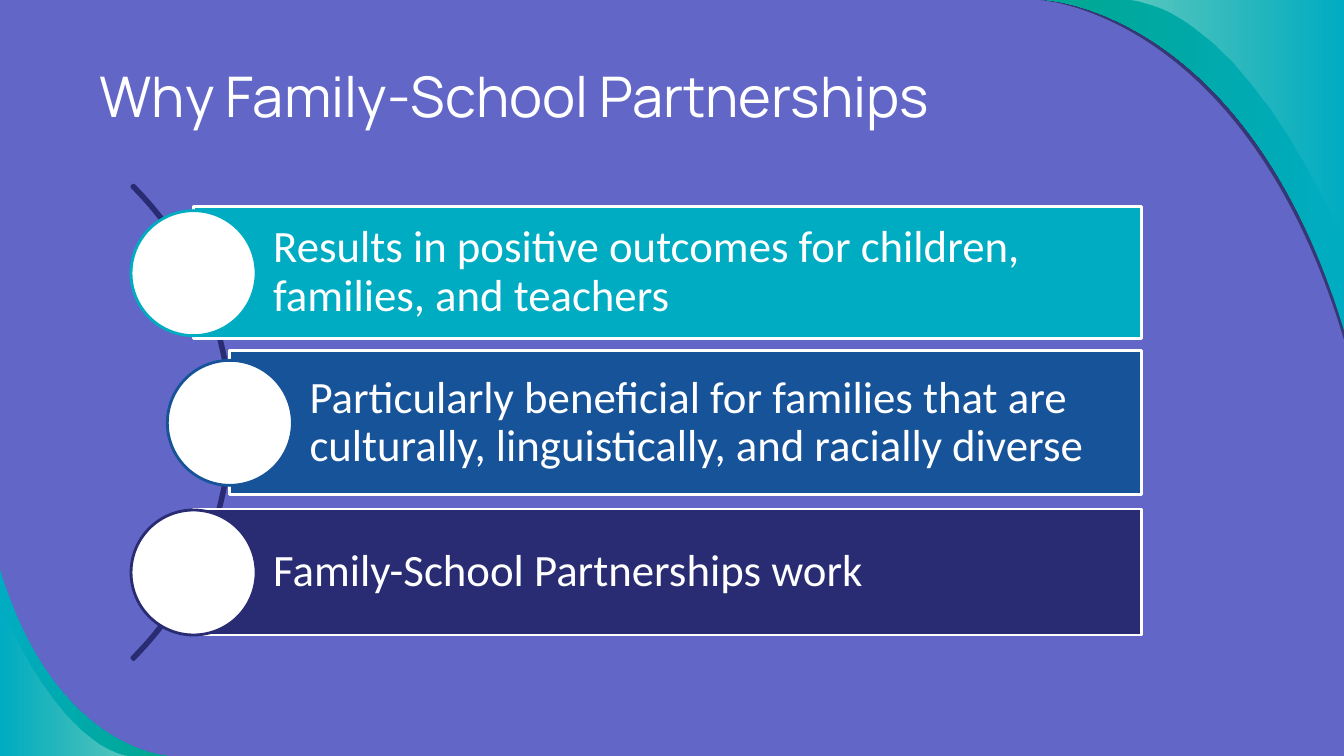
from typing import NamedTuple

from lxml.etree import Element, SubElement
from pptx import Presentation
from pptx.dml.color import RGBColor
from pptx.enum.shapes import MSO_SHAPE
from pptx.enum.text import MSO_ANCHOR, PP_ALIGN
from pptx.oxml.ns import qn
from pptx.util import Inches, Pt

WHITE = RGBColor(0xFF, 0xFF, 0xFF)
PURPLE = RGBColor(0x62, 0x67, 0xC7)
CYAN = RGBColor(0x00, 0xAC, 0xC2)
GREEN = RGBColor(0x00, 0xA7, 0x91)
BLUE = RGBColor(0x17, 0x53, 0x98)
NAVY = RGBColor(0x29, 0x2C, 0x73)
SHADE = RGBColor(0x12, 0x10, 0x2F)

WIDTH, HEIGHT = 13.33, 7.5
BAR_RIGHT = 11.32
CIRCLE = 1.24
CIRCLE_TOP, CIRCLE_STEP = 2.09, 1.485

Point = tuple[float, float]


class Stop(NamedTuple):
    color: RGBColor
    alpha: int = 100


class Swoosh(NamedTuple):
    """A slide corner cut off by one Bezier curve."""
    curve: tuple[Point, Point, Point, Point]
    corner: Point
    stops: tuple[Stop, ...]
    angle: int = 0


class Reason(NamedTuple):
    text: str
    color: RGBColor
    left: float
    top: float
    height: float


TEAL = (Stop(CYAN), Stop(GREEN))
GLOW = (Stop(WHITE, 0), Stop(WHITE, 36))
TOP_RIGHT, BOTTOM_LEFT = (WIDTH, 0), (0, HEIGHT)

SWOOSHES = [
    Swoosh(((WIDTH, 3.37), (12.35, 0.11), (10.31, 0), (10.31, 0)), TOP_RIGHT, (Stop(SHADE, 54),)),
    Swoosh(((10.38, 0), (10.38, 0), (12.38, 0.11), (WIDTH, 3.28)), TOP_RIGHT, TEAL, 180),
    Swoosh(((WIDTH, 2.44), (WIDTH, 2.44), (12.42, 0.15), (11.18, 0)), TOP_RIGHT, GLOW, 180),
    Swoosh(((1.66, HEIGHT), (1.66, HEIGHT), (0.54, 7.44), (0, 5.65)), BOTTOM_LEFT, TEAL),
    Swoosh(((0, 6.01), (0, 6.01), (0.56, 7.41), (1.32, HEIGHT)), BOTTOM_LEFT, GLOW),
]

REASONS = [
    Reason("Results in positive outcomes for children, families, and teachers",
           CYAN, 1.92, 2.05, 1.31),
    Reason("Particularly beneficial for families that are culturally, "
           "linguistically, and racially diverse", BLUE, 2.28, 3.48, 1.43),
    Reason("Family-School Partnerships work", NAVY, 1.92, 5.05, 1.25),
]


def curve_first_segments(s) -> None:
    """Turn the first three line segments of a freeform into one Bezier curve."""
    lines = list(s.element.iter(qn("a:lnTo")))[:3]
    curve = Element(qn("a:cubicBezTo"))
    lines[0].addprevious(curve)
    for line in lines:
        curve.append(line[0])
        line.getparent().remove(line)


def add_swoosh(shapes, swoosh: Swoosh) -> None:
    start, *others = [(Inches(x), Inches(y)) for x, y in (*swoosh.curve, swoosh.corner)]
    builder = shapes.build_freeform(*start)
    builder.add_line_segments(others)
    s = builder.convert_to_shape()
    curve_first_segments(s)
    s.shadow.inherit = False
    s.line.fill.background()
    if len(swoosh.stops) == 1:
        s.fill.solid()
        s.fill.fore_color.rgb = swoosh.stops[0].color
    else:
        s.fill.gradient()
        s.fill.gradient_angle = swoosh.angle
        for gradient_stop, stop in zip(s.fill.gradient_stops, swoosh.stops):
            gradient_stop.color.rgb = stop.color
    colors = list(s.element.spPr.iter(qn("a:srgbClr")))
    for color, stop in zip(colors, swoosh.stops):
        if stop.alpha < 100:
            SubElement(color, qn("a:alpha"), val=str(stop.alpha * 1000))


def add_shape(shapes, kind: MSO_SHAPE, left: float, top: float, width: float, height: float,
              *, fill: RGBColor | None, line: RGBColor):
    s = shapes.add_shape(kind, Inches(left), Inches(top), Inches(width), Inches(height))
    s.shadow.inherit = False
    if fill is None:
        s.fill.background()
    else:
        s.fill.solid()
        s.fill.fore_color.rgb = fill
    s.line.color.rgb = line
    s.line.width = Pt(2)
    return s


def write(s, text: str, *, font: str, size: int, left_inset: float = 0.1, inset: float = 0.1,
          anchor: MSO_ANCHOR = MSO_ANCHOR.TOP, spacing: float = 1.0) -> None:
    tf = s.text_frame
    tf.word_wrap = True
    tf.vertical_anchor = anchor
    tf.margin_left = Inches(left_inset)
    tf.margin_right = tf.margin_top = tf.margin_bottom = Inches(inset)
    p = tf.paragraphs[0]
    p.alignment = PP_ALIGN.LEFT
    p.line_spacing = spacing
    r = p.add_run()
    r.text = text
    r.font.name = font
    r.font.size = Pt(size)
    r.font.color.rgb = WHITE


def add_reason(shapes, reason: Reason, circle_top: float) -> None:
    bar = add_shape(shapes, MSO_SHAPE.RECTANGLE, reason.left, reason.top,
                    BAR_RIGHT - reason.left, reason.height, fill=reason.color, line=WHITE)
    write(bar, reason.text, font="Calibri", size=32, left_inset=0.79, inset=0.09,
          anchor=MSO_ANCHOR.MIDDLE, spacing=0.9)
    add_shape(shapes, MSO_SHAPE.OVAL, reason.left - CIRCLE / 2, circle_top,
              CIRCLE, CIRCLE, fill=WHITE, line=reason.color)


def main() -> None:
    prs = Presentation()
    prs.slide_width, prs.slide_height = Inches(WIDTH), Inches(HEIGHT)
    slide = prs.slides.add_slide(prs.slide_layouts[6])
    slide.background.fill.solid()
    slide.background.fill.fore_color.rgb = PURPLE
    shapes = slide.shapes

    for swoosh in SWOOSHES:
        add_swoosh(shapes, swoosh)

    title = shapes.add_textbox(Inches(0.89), Inches(0.51), Inches(10.26), Inches(0.92))
    write(title, "Why Family-School Partnerships", font="Manrope", size=40)

    arc = add_shape(shapes, MSO_SHAPE.BLOCK_ARC, -4.36, 0.86, 6.66, 6.66, fill=None, line=NAVY)
    # 315 and 45 degrees as start and end, then the relative thickness
    for i, value in enumerate((189, 27, 0.004)):
        arc.adjustments[i] = value

    for i, reason in enumerate(REASONS):
        add_reason(shapes, reason, CIRCLE_TOP + i * CIRCLE_STEP)

    prs.save("out.pptx")


if __name__ == "__main__":
    main()
